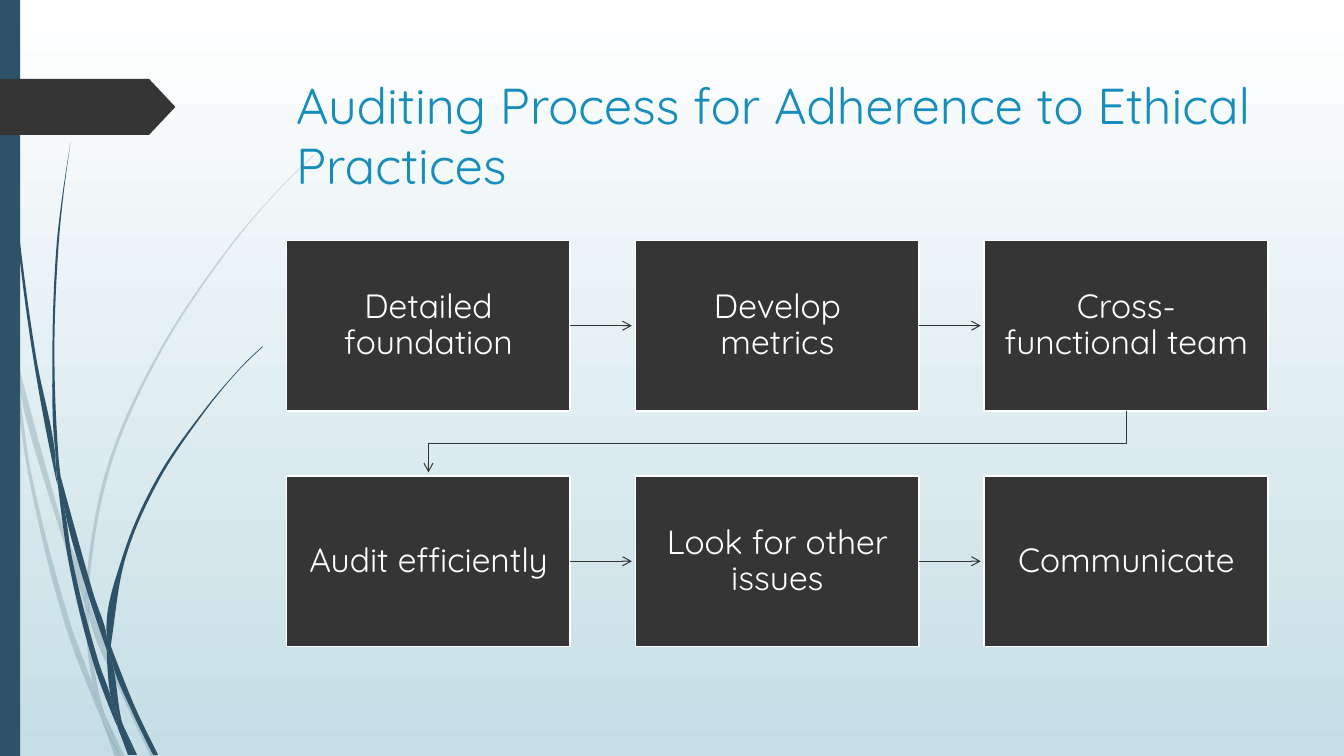
from dataclasses import dataclass
from math import hypot

from lxml.etree import SubElement
from pptx import Presentation
from pptx.dml.color import RGBColor
from pptx.enum.shapes import MSO_CONNECTOR, MSO_SHAPE
from pptx.enum.text import MSO_ANCHOR, MSO_AUTO_SIZE, PP_ALIGN
from pptx.oxml.ns import qn
from pptx.util import Cm, Pt


@dataclass(frozen=True)
class Theme:
    font: str = "Quicksand"
    title_size: Pt = Pt(36)
    step_size: Pt = Pt(24)
    title: RGBColor = RGBColor(0x17, 0x8D, 0xBB)
    dark: RGBColor = RGBColor(0x35, 0x35, 0x35)
    stem: RGBColor = RGBColor(0x2E, 0x53, 0x69)
    white: RGBColor = RGBColor(0xFF, 0xFF, 0xFF)
    haze: RGBColor = RGBColor(0xC5, 0xDE, 0xE5)


THEME = Theme()
STEPS = [
    ["Detailed foundation", "Develop metrics", "Cross-functional team"],
    ["Audit efficiently", "Look for other issues", "Communicate"],
]
# Blades of grass: x and y of each corner in turn, in units of STEM_UNIT.
STEM_UNIT = Cm(2.54) // 100
PALE_BLADES = [
    (11, 350, 9, 322, 0, 282, 0, 299, 10, 344),
    (58, 522, 84, 599, 85, 586, 62, 520, 14, 345, 17, 376),
    (92, 607, 88, 596, 88, 610, 123, 694, 150, 751, 155, 751, 127, 692),
    (119, 751, 124, 751, 105, 711),
    (93, 683, 70, 619, 31, 469, 17, 376, 11, 350, 28, 470, 65, 621, 92, 693,
     101, 714, 99, 707),
    (84, 599, 87, 646, 93, 683, 96, 692, 105, 711, 103, 706, 91, 646, 88, 610,
     88, 608),
    (88, 584, 110, 462, 160, 349, 229, 245, 268, 198, 290, 175, 312, 154,
     312, 153, 289, 175, 268, 197, 228, 244, 158, 348, 107, 461, 85, 584,
     85, 586, 88, 596),
    (101, 714, 114, 751, 119, 751),
    (88, 608, 88, 610, 88, 596, 85, 586, 84, 599),
    (96, 692, 93, 683, 99, 707, 101, 714, 119, 751, 105, 711),
]
DARK_BLADES = [
    (7, 110, 17, 233, 33, 355, 56, 477, 57, 481, 55, 457, 55, 453, 36, 355,
     19, 232, 8, 109, 5, 48, 4, 0, 3, 0, 4, 48),
    (88, 592, 106, 645, 106, 633, 106, 631, 93, 590, 60, 472, 64, 505),
    (113, 649, 110, 641, 111, 656, 132, 708, 152, 749, 157, 749, 136, 706),
    (110, 691, 98, 657, 72, 556, 64, 505, 57, 477, 68, 557, 93, 659, 111, 708,
     117, 722, 116, 717),
    (60, 472, 58, 453, 54, 349, 58, 245, 63, 193, 70, 141, 62, 193, 56, 245,
     52, 349, 55, 449),
    (133, 749, 136, 749, 122, 719),
    (57, 477, 64, 505, 60, 472, 55, 449, 55, 453),
    (111, 633, 125, 552, 158, 476, 205, 406, 231, 374, 245, 359, 261, 344,
     260, 344, 245, 358, 231, 373, 204, 405, 156, 474, 122, 551, 106, 631,
     110, 641),
    (117, 722, 127, 749, 131, 749),
    (106, 645, 110, 691, 116, 706, 122, 719, 121, 716, 111, 656, 109, 651),
    (106, 645, 109, 651, 111, 656, 110, 641, 106, 631, 106, 633),
    (116, 706, 110, 691, 116, 717, 117, 722, 130, 749, 133, 749, 122, 719),
]


def fill_plain(shape, color):
    shape.shadow.inherit = False
    shape.fill.solid()
    shape.fill.fore_color.rgb = color
    shape.line.fill.background()


def write_span(para, text, size, color):
    span = para.add_run()
    span.text = text
    span.font.name = THEME.font
    span.font.size = size
    span.font.color.rgb = color


def find_direction(before, corner, after):
    """Return the unit direction of a smooth curve here, or zero at a sharp turn."""
    (ax, ay), (bx, by) = [
        ((end[0] - start[0]) / hypot(end[0] - start[0], end[1] - start[1]),
         (end[1] - start[1]) / hypot(end[0] - start[0], end[1] - start[1]))
        for start, end in ((before, corner), (corner, after))]
    if ax * bx + ay * by < 0.8:
        return 0, 0
    size = hypot(ax + bx, ay + by)
    return (ax + bx) / size, (ay + by) / size


def round_sides(shape):
    """Turn the straight sides of a closed freeform into smooth curves."""
    sides = list(shape._element.iter(qn("a:lnTo")))
    ends = [(int(side[0].get("x")), int(side[0].get("y"))) for side in sides]
    directions = [find_direction(ends[i - 1], end, ends[(i + 1) % len(ends)])
                  for i, end in enumerate(ends)]
    for i, side in enumerate(sides):
        (x1, y1), (x2, y2) = ends[i - 1], ends[i]
        (dx1, dy1), (dx2, dy2) = directions[i - 1], directions[i]
        third = hypot(x2 - x1, y2 - y1) / 3
        side.tag = qn("a:cubicBezTo")
        side.remove(side[0])
        for x, y in ((x1 + dx1 * third, y1 + dy1 * third),
                     (x2 - dx2 * third, y2 - dy2 * third), (x2, y2)):
            point = SubElement(side, qn("a:pt"))
            point.set("x", str(round(x)))
            point.set("y", str(round(y)))


def draw_blade(page, numbers, opacity):
    corners = [(x * STEM_UNIT, y * STEM_UNIT)
               for x, y in zip(numbers[::2], numbers[1::2])]
    builder = page.shapes.build_freeform(*corners[0])
    builder.add_line_segments(corners[1:] + corners[:1])
    blade = builder.convert_to_shape()
    round_sides(blade)
    fill_plain(blade, THEME.stem)
    if opacity < 100:
        color = blade.fill._xPr.find(qn("a:solidFill"))[0]
        SubElement(color, qn("a:alpha")).set("val", str(opacity * 1000))


def draw_backdrop(page, height):
    """Draw the gradient, the grass, the side bar and the tag."""
    fill = page.background.fill
    fill.gradient()
    fill.gradient_angle = 270
    for stop, color in zip(fill.gradient_stops, (THEME.white, THEME.haze)):
        stop.color.rgb = color
    for blades, opacity in ((PALE_BLADES, 20), (DARK_BLADES, 100)):
        for numbers in blades:
            draw_blade(page, numbers, opacity)
    bar = page.shapes.add_shape(MSO_SHAPE.RECTANGLE, 0, 0, Cm(0.51), height)
    fill_plain(bar, THEME.stem)
    tag = page.shapes.add_shape(MSO_SHAPE.PENTAGON, 0, Cm(1.99), Cm(4.42), Cm(1.41))
    tag.adjustments[0] = 0.47
    fill_plain(tag, THEME.dark)


def place_title(page, text, left, top, width, height):
    title = page.shapes.title
    title.left, title.top, title.width, title.height = left, top, width, height
    frame = title.text_frame
    frame.word_wrap = True
    frame.auto_size = MSO_AUTO_SIZE.NONE
    frame.vertical_anchor = MSO_ANCHOR.TOP
    para = frame.paragraphs[0]
    para.alignment = PP_ALIGN.LEFT
    write_span(para, text, THEME.title_size, THEME.title)


def draw_step(page, text, left, top, width, height):
    box = page.shapes.add_shape(MSO_SHAPE.RECTANGLE, left, top, width, height)
    fill_plain(box, THEME.dark)
    box.line.color.rgb = THEME.white
    box.line.width = Pt(1.25)
    frame = box.text_frame
    frame.word_wrap = True
    frame.vertical_anchor = MSO_ANCHOR.MIDDLE
    frame.margin_left = frame.margin_right = Cm(0.48)
    frame.margin_top = frame.margin_bottom = Cm(0.48)
    para = frame.paragraphs[0]
    para.alignment = PP_ALIGN.CENTER
    para.line_spacing = 0.9
    write_span(para, text, THEME.step_size, THEME.white)
    return box


def style_arrow(arrow):
    arrow.line.color.rgb = THEME.dark
    arrow.line.width = Pt(0.75)
    SubElement(arrow.line._get_or_add_ln(), qn("a:tailEnd")).set("type", "arrow")


def link_across(page, source, target, gap):
    middle = source.top + source.height // 2
    arrow = page.shapes.add_connector(
        MSO_CONNECTOR.STRAIGHT, source.left + source.width, middle,
        target.left - gap, middle)
    arrow.begin_connect(source, 3)
    style_arrow(arrow)
    SubElement(arrow._element.spPr, qn("a:effectLst"))


def link_down(page, source, target, gap):
    """Lead from the end of one row to the start of the next."""
    start_x = source.left + source.width // 2
    end_x = target.left + target.width // 2
    start_y = source.top + source.height
    turn_y = (start_y + target.top) // 2
    builder = page.shapes.build_freeform(start_x, start_y)
    builder.add_line_segments(
        [(start_x, turn_y), (end_x, turn_y), (end_x, target.top - gap)], close=False)
    arrow = builder.convert_to_shape()
    arrow.shadow.inherit = False
    arrow.fill.background()
    style_arrow(arrow)


def draw_process(page, rows, left, top, width, height):
    gap, arrow_gap = Cm(1.64), Cm(0.09)
    columns = len(rows[0])
    box_width = (width - gap * (columns - 1)) // columns
    box_height = (height - gap * (len(rows) - 1)) // len(rows)
    grid = [[draw_step(page, text, left + column * (box_width + gap),
                       top + row * (box_height + gap), box_width, box_height)
             for column, text in enumerate(texts)] for row, texts in enumerate(rows)]
    for boxes in grid:
        for source, target in zip(boxes, boxes[1:]):
            link_across(page, source, target, arrow_gap)
    for upper, lower in zip(grid, grid[1:]):
        link_down(page, upper[-1], lower[0], arrow_gap)


deck = Presentation()
deck.slide_width, deck.slide_height = Cm(33.87), Cm(19.05)
page = deck.slides.add_slide(deck.slide_layouts[5])
draw_backdrop(page, deck.slide_height)
place_title(page, "Auditing Process for Adherence to Ethical Practices",
            Cm(7.21), Cm(1.73), Cm(24.77), Cm(3.56))
draw_process(page, STEPS, Cm(7.22), Cm(6.06), Cm(24.74), Cm(10.23))
deck.save("out.pptx")
